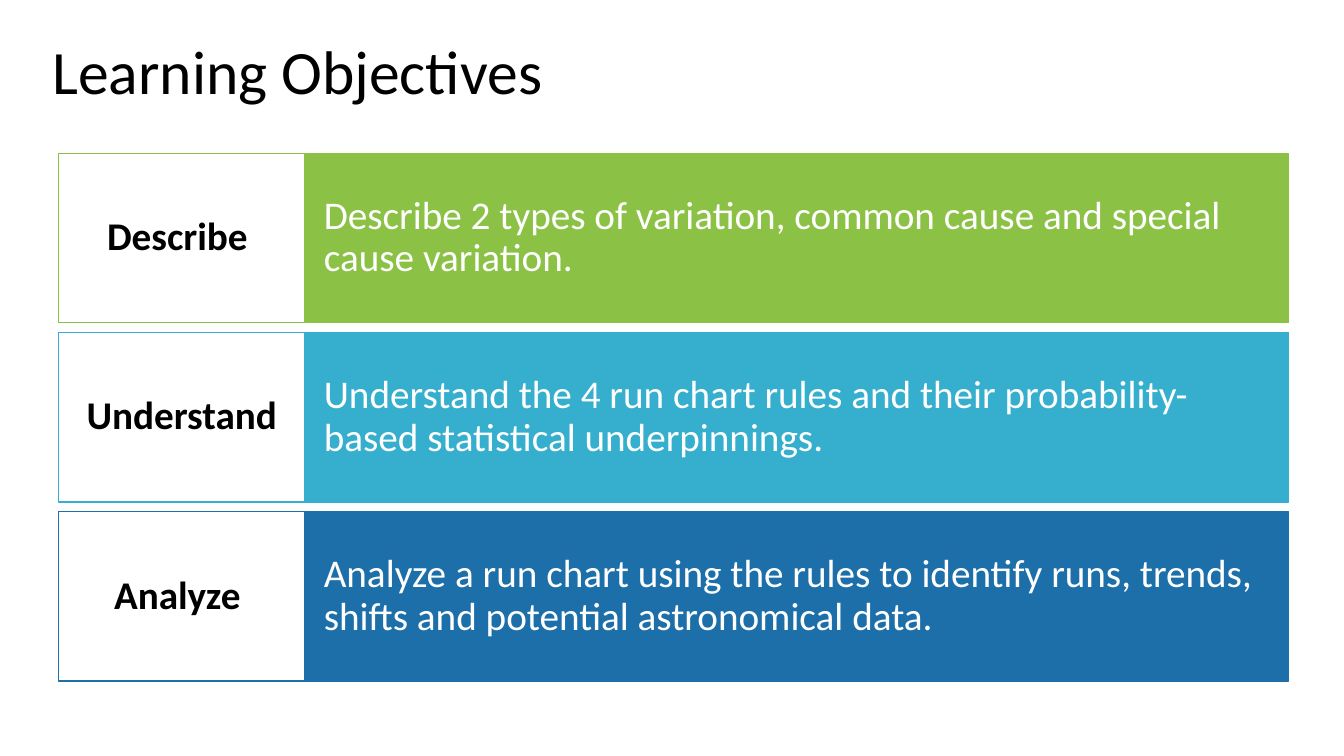
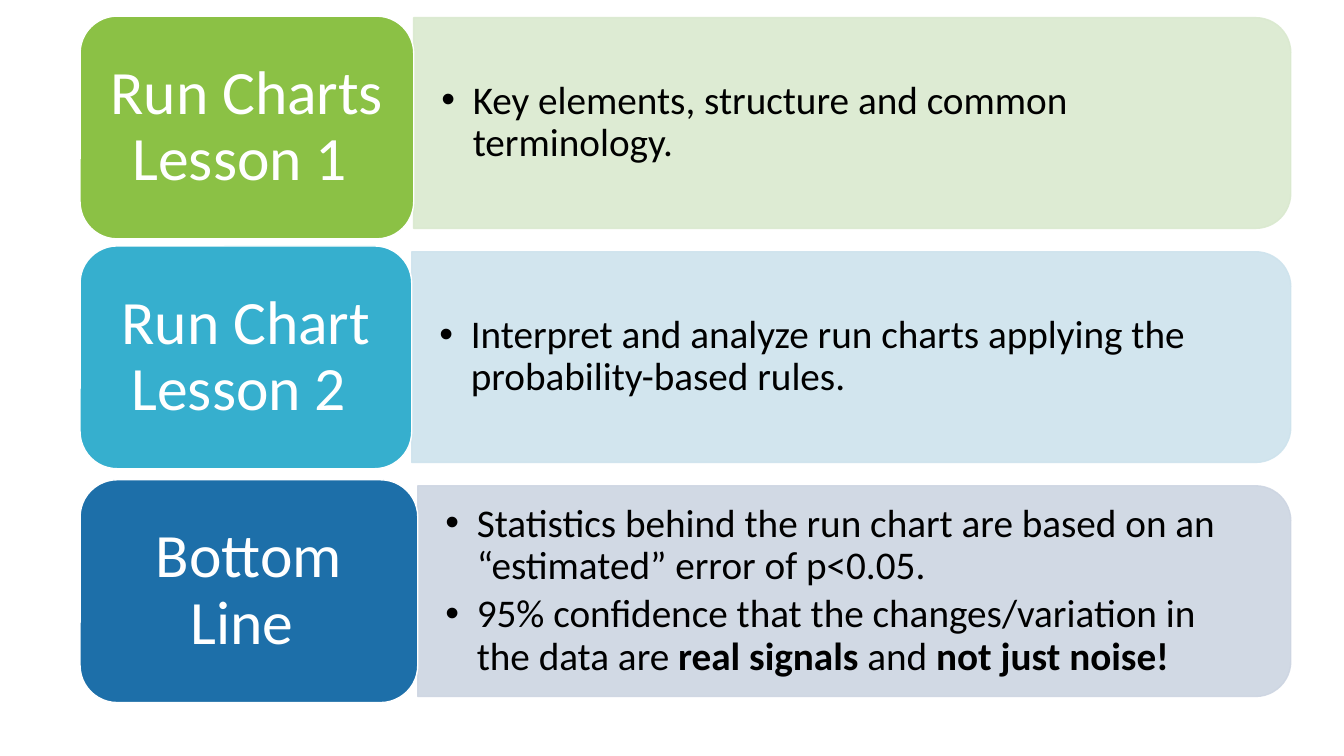
import lxml.etree
import pptx
import pptx.dml.color
import pptx.enum.shapes
import pptx.enum.text
import pptx.oxml.ns
import pptx.util

Pt = pptx.util.Pt
RGBColor = pptx.dml.color.RGBColor
Shape = pptx.enum.shapes.MSO_SHAPE
Align = pptx.enum.text.PP_ALIGN
Anchor = pptx.enum.text.MSO_ANCHOR
qn = pptx.oxml.ns.qn

FONT = "Calibri"
BLACK = RGBColor(0x00, 0x00, 0x00)
WHITE = RGBColor(0xFF, 0xFF, 0xFF)
GREEN = RGBColor(0x8B, 0xC1, 0x45)
CYAN = RGBColor(0x36, 0xAF, 0xCE)
BLUE = RGBColor(0x1D, 0x6F, 0xA9)
PALE_GREEN = RGBColor(0xDA, 0xE9, 0xCF)
PALE_CYAN = RGBColor(0xCE, 0xE3, 0xED)
PALE_BLUE = RGBColor(0xCD, 0xD5, 0xE2)

GOALS = [
    ("Describe ", GREEN,
     "Describe 2 types of variation, common cause and special cause variation."),
    ("Understand", CYAN,
     "Understand the 4 run chart rules and their probability-based "
     "statistical underpinnings."),
    ("Analyze ", BLUE,
     "Analyze a run chart using the rules to identify runs, trends, shifts "
     "and potential astronomical data."),
]

# Label text, label colour, panel colour, label top, label width, bullets
LESSONS = [
    ("Run Charts Lesson 1 ", GREEN, PALE_GREEN, 11.5, 238.3,
     [[("Key elements, structure and common terminology.", False)]]),
    ("Run Chart Lesson 2 ", CYAN, PALE_CYAN, 175.7, 236.9,
     [[("Interpret and analyze run charts applying the "
        "probability-based rules.", False)]]),
    ("Bottom Line ", BLUE, PALE_BLUE, 342.7, 241.2,
     [[("Statistics behind the run chart are based on an “estimated” "
        "error of p<0.05.", False)],
      [("95% confidence that the changes/variation in the data are ", False),
       ("real signals ", True), ("and ", False), ("not just noise!", True)]]),
]


def assign(item, values):
    for name, value in values.items():
        setattr(item, name, value)


def place(item, box):
    assign(item, dict(zip(("left", "top", "width", "height"), map(Pt, box))))


def write(frame, paras, size, color, align=Align.LEFT, pad=(7.2, 3.6), gap=0):
    """Fill a text frame with paragraphs, each a list of (text, bold) runs."""
    side, edge = map(Pt, pad)
    assign(frame, {"word_wrap": True, "vertical_anchor": Anchor.MIDDLE,
                   "margin_left": side, "margin_right": side,
                   "margin_top": edge, "margin_bottom": edge})
    for i, runs in enumerate(paras):
        para = frame.add_paragraph() if i else frame.paragraphs[0]
        assign(para, {"alignment": align, "line_spacing": 0.9,
                      "space_before": Pt(gap if i else 0),
                      "space_after": Pt(0)})
        for text, bold in runs:
            run = para.add_run()
            run.text = text
            assign(run.font, {"name": FONT, "size": Pt(size), "bold": bold})
            run.font.color.rgb = color


def block(slide, kind, box, fill, line):
    shape = slide.shapes.add_shape(kind, *map(Pt, box))
    shape.shadow.inherit = False
    shape.fill.solid()
    shape.fill.fore_color.rgb = fill
    shape.line.color.rgb = line
    shape.line.width = Pt(1)
    return shape


def fade(shape, percent):
    """Set the opacity of a shape's fill and line."""
    for color in shape.element.spPr.iter(qn("a:srgbClr")):
        alpha = lxml.etree.SubElement(color, qn("a:alpha"))
        alpha.set("val", str(percent * 1000))


def bullet(para, indent):
    props = para._p.get_or_add_pPr()
    props.set("marL", str(Pt(indent)))
    props.set("indent", str(-Pt(indent)))
    lxml.etree.SubElement(props, qn("a:buFont")).set("typeface", "Arial")
    lxml.etree.SubElement(props, qn("a:buChar")).set("char", "•")


def goal_row(slide, box, label, color, text):
    left, top, width, height = box
    split = width / 5
    body = block(slide, Shape.RECTANGLE,
                 (left + split, top, width - split, height), color, color)
    write(body.text_frame, [[(text, False)]], 28, WHITE, pad=(13.6, 30.8))
    head = block(slide, Shape.RECTANGLE, (left, top, split, height),
                 WHITE, color)
    write(head.text_frame, [[(label, True)]], 28, BLACK, Align.CENTER,
          (9.3, 12.3))


def side_panel(slide, box, color, paras):
    """Panel with its two right corners rounded, and bullets over it."""
    left, top, width, height = box
    shift = (width - height) / 2
    panel = block(slide, Shape.ROUND_2_SAME_RECTANGLE,
                  (left + shift, top - shift, height, width), color, color)
    panel.rotation = 90
    fade(panel, 90)
    inset = 7.3
    area = (left, top + inset, width - inset, height - 2 * inset)
    frame = slide.shapes.add_textbox(*map(Pt, area)).text_frame
    write(frame, paras, 28, BLACK, pad=(19.7, 9.8), gap=4.2)
    for para in frame.paragraphs:
        bullet(para, 22.5)


def lesson_label(slide, box, color, text):
    label = block(slide, Shape.ROUNDED_RECTANGLE, box, color, WHITE)
    write(label.text_frame, [[(text, False)]], 44, WHITE, Align.CENTER,
          (13.2, 6.6))


def goals_slide(deck):
    slide = deck.slides.add_slide(deck.slide_layouts[5])
    title = slide.shapes.title
    place(title, (30.2, 1.4, 620.6, 104.4))
    write(title.text_frame, [[("Learning Objectives", False)]], 44, BLACK)
    for i, goal in enumerate(GOALS):
        goal_row(slide, (42, 109.5 + 128 * i, 878.5, 121), *goal)


def lessons_slide(deck):
    slide = deck.slides.add_slide(deck.slide_layouts[6])
    left, right = 57.2, 922
    for i, (text, color, pale, top, width, paras) in enumerate(LESSONS):
        start = left + width
        side_panel(slide, (start, 12.6 + 167.2 * i, right - start, 150.5),
                   pale, paras)
        lesson_label(slide, (left, top, width, 159.1), color, text)


def main():
    deck = pptx.Presentation()
    assign(deck, {"slide_width": Pt(960), "slide_height": Pt(540)})
    goals_slide(deck)
    lessons_slide(deck)
    deck.save("out.pptx")


if __name__ == "__main__":
    main()
